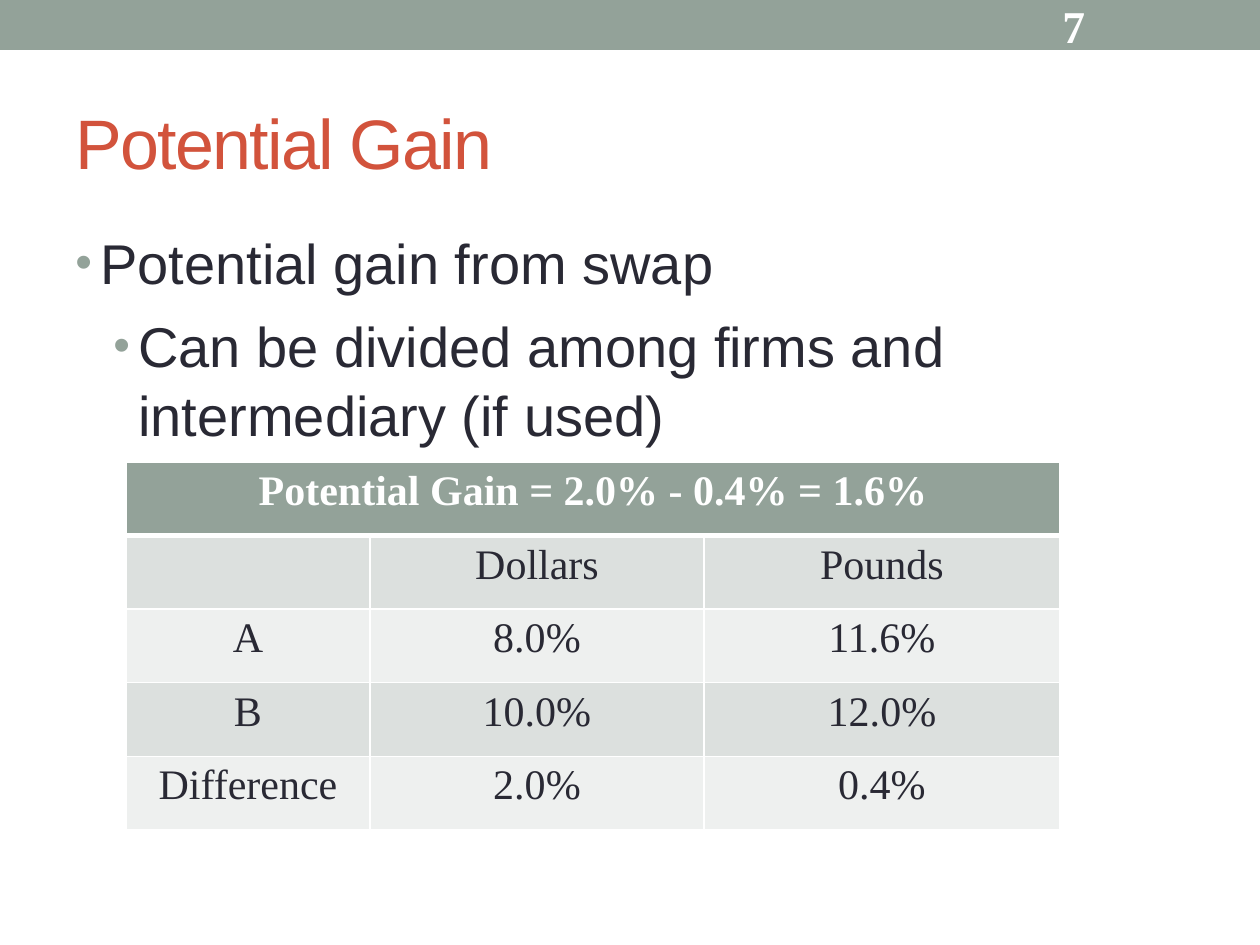
"""Builds the Potential Gain slide with its swap rate table."""
from lxml.etree import SubElement
from pptx import Presentation
from pptx.dml.color import RGBColor
from pptx.enum.shapes import MSO_SHAPE as SHAPE
from pptx.enum.text import MSO_ANCHOR as ANCHOR, PP_ALIGN as ALIGN
from pptx.oxml.ns import qn
from pptx.util import Pt

TITLE = "Potential Gain"
NUMBER = "7"
BULLETS = [
    (0, 25, "Potential gain from swap"),
    (1, 63, "Can be divided among firms and intermediary (if used)"),
]
HEADING = "Potential Gain = 2.0% - 0.4% = 1.6%"
ROWS = [
    ("", "Dollars", "Pounds"),
    ("A", "8.0%", "11.6%"),
    ("B", "10.0%", "12.0%"),
    ("Difference", "2.0%", "0.4%"),
]
COLUMNS = [244, 334, 356]
TABLE_LEFT, TABLE_TOP, TABLE_HEIGHT = 126, 462, 368
HANGING = 25
SAGE, RED, INK, WHITE = "93A299", "D2533C", "292934", "FFFFFF"
BANDS = ["DCE0DE", "EEF0EF"]
SANS, SERIF = "Arial", "Times New Roman"


def px(n):
    return round(n * 914400 / 126)


def box(*lengths):
    return [px(n) for n in lengths]


def color(value):
    return RGBColor.from_string(value)


def fill(target, value):
    target.fill.solid()
    target.fill.fore_color.rgb = color(value)


def write(p, text, font=SANS, size=32, ink=INK, bold=False, align=ALIGN.LEFT):
    p.alignment = align
    r = p.add_run()
    r.text = text
    r.font.name, r.font.size, r.font.bold = font, Pt(size), bold
    r.font.color.rgb = color(ink)
    return r


def add_bullet(p, indent):
    pPr = p._p.get_or_add_pPr()
    pPr.set("marL", str(px(indent)))
    pPr.set("indent", str(-px(HANGING)))
    SubElement(SubElement(pPr, qn("a:buClr")), qn("a:srgbClr"), val=SAGE)
    SubElement(pPr, qn("a:buSzPct"), val="85000")
    SubElement(pPr, qn("a:buFont"), typeface=SANS)
    SubElement(pPr, qn("a:buChar"), char="•")


def set_borders(cell, **widths):
    tcPr = cell._tc.get_or_add_tcPr()
    for side in ("lnL", "lnR", "lnT", "lnB"):
        ln = SubElement(tcPr, qn("a:" + side), w=str(Pt(widths.get(side, 1))))
        SubElement(SubElement(ln, qn("a:solidFill")), qn("a:srgbClr"), val=WHITE)


def add_header(slide):
    bar = slide.shapes.add_shape(SHAPE.RECTANGLE, *box(0, 0, 1260, 50))
    bar.shadow.inherit = False
    fill(bar, SAGE)
    bar.line.fill.background()
    tf = slide.shapes.add_textbox(*box(1050, 3, 147, 45)).text_frame
    tf.word_wrap = True
    tf.vertical_anchor = ANCHOR.MIDDLE
    tf.margin_top = tf.margin_bottom = 0
    write(tf.paragraphs[0], NUMBER, font=SERIF, size=26, ink=WHITE, bold=True)


def add_title(slide):
    title = slide.shapes.title
    title.left, title.top, title.width, title.height = box(63, 73, 1134, 136)
    tf = title.text_frame
    tf.vertical_anchor = ANCHOR.MIDDLE
    r = write(tf.paragraphs[0], TITLE, size=40, ink=RED)
    r.font._element.set("spc", "-100")


def add_body(slide):
    tf = slide.shapes.add_textbox(*box(63, 220, 1134, 672)).text_frame
    tf.word_wrap = True
    for i, (level, indent, text) in enumerate(BULLETS):
        p = tf.add_paragraph() if i else tf.paragraphs[0]
        p.level = level
        p.line_spacing = 1.04
        p.space_before = Pt(7)
        add_bullet(p, indent)
        write(p, text)


def add_rates(slide):
    frame = slide.shapes.add_table(
        len(ROWS) + 1, len(COLUMNS),
        *box(TABLE_LEFT, TABLE_TOP, sum(COLUMNS), TABLE_HEIGHT))
    table = frame.table
    for column, width in zip(table.columns, COLUMNS):
        column.width = px(width)
    table.cell(0, 0).merge(table.cell(0, len(COLUMNS) - 1))
    for c in range(len(COLUMNS)):
        set_borders(table.cell(0, c), lnB=3)
        fill(table.cell(0, c), SAGE)
    write(table.cell(0, 0).text_frame.paragraphs[0], HEADING, font=SERIF,
          size=24, ink=WHITE, bold=True, align=ALIGN.CENTER)
    for i, row in enumerate(ROWS):
        for c, text in enumerate(row):
            cell = table.cell(i + 1, c)
            set_borders(cell, lnT=1 if i else 3)
            fill(cell, BANDS[i % 2])
            if text:
                write(cell.text_frame.paragraphs[0], text, font=SERIF,
                      size=24, align=ALIGN.CENTER)


def main():
    prs = Presentation()
    prs.slide_width, prs.slide_height = box(1260, 945)
    slide = prs.slides.add_slide(prs.slide_layouts[5])
    add_header(slide)
    add_title(slide)
    add_body(slide)
    add_rates(slide)
    prs.save("out.pptx")


if __name__ == "__main__":
    main()
